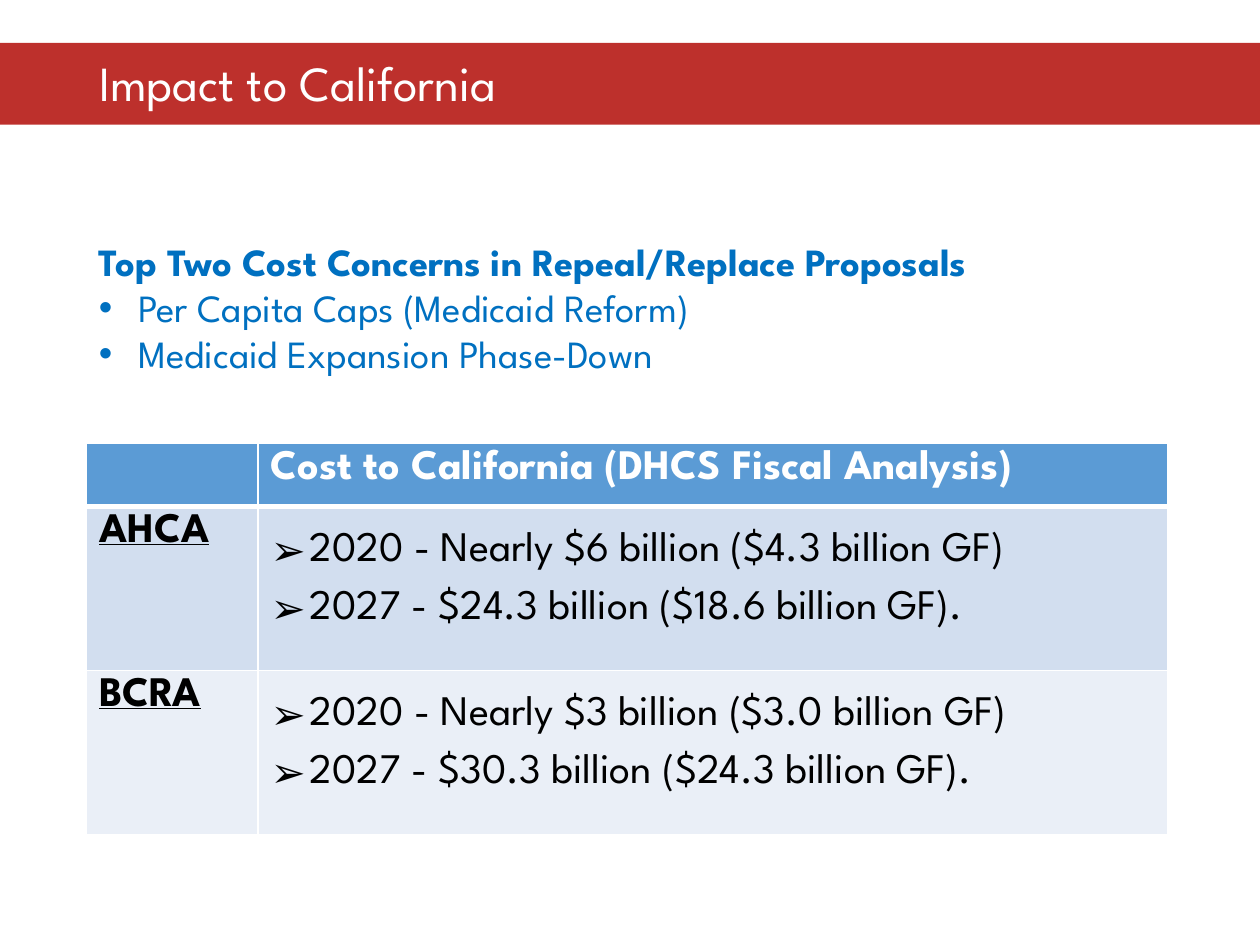
from lxml import etree
from pptx import Presentation
from pptx.dml.color import RGBColor
from pptx.enum.shapes import MSO_SHAPE
from pptx.enum.text import MSO_ANCHOR
from pptx.oxml.ns import qn
from pptx.util import Pt

RECTANGLE = MSO_SHAPE.RECTANGLE
TOP, MIDDLE = MSO_ANCHOR.TOP, MSO_ANCHOR.MIDDLE

TITLE = "Impact to California"
CONCERNS_HEADING = "Top Two Cost Concerns in Repeal/Replace Proposals"
CONCERNS = ["Per Capita Caps (Medicaid Reform)", "Medicaid Expansion Phase-Down"]
COST_HEADING = "Cost to California (DHCS Fiscal Analysis)"
COSTS = {
    "AHCA": ["2020 - Nearly $6 billion ($4.3 billion GF)",
             "2027 - $24.3 billion ($18.6 billion GF)."],
    "BCRA": ["2020 - Nearly $3 billion ($3.0 billion GF)",
             "2027 - $30.3 billion ($24.3 billion GF)."],
}

THEME = {
    "font": "League Spartan", "bullet_font": "Arial",
    "title_size": 28, "concern_size": 22, "cost_size": 24,
    "banner": "BD302C", "white": "FFFFFF", "black": "000000",
    "concern": "0070C0", "header": "5B9BD5", "bands": ["D2DEEF", "EAEFF7"],
}

SLIDE_WIDTH, SLIDE_HEIGHT = 720, 540
LEFT = 49.5
COLUMN_WIDTHS = [97.92, 519.84]
ROW_HEIGHTS = [35.28, 91.44, 83.52]
INDENT = 22.5


def color(key):
    return RGBColor.from_string(THEME[key])


def add_bullet(paragraph, symbol):
    properties = paragraph._p.get_or_add_pPr()
    properties.set("marL", str(Pt(INDENT)))
    properties.set("indent", str(-Pt(INDENT)))
    etree.SubElement(properties, qn("a:buFont")).set("typeface", THEME["bullet_font"])
    etree.SubElement(properties, qn("a:buChar")).set("char", symbol)


def write(frame, lines, size, ink, bold=False, underline=False, bullet=None,
          spacing=None):
    for line in lines:
        paragraph = frame.add_paragraph() if frame.text else frame.paragraphs[0]
        paragraph.text = line
        if spacing:
            paragraph.line_spacing = spacing
        if bullet:
            add_bullet(paragraph, bullet)
        font = paragraph.font
        font.name, font.size = THEME["font"], Pt(THEME[size])
        font.bold, font.underline = bold, underline
        font.color.rgb = color(ink)


def add_text_box(slide, top, width, height, anchor):
    frame = slide.shapes.add_textbox(Pt(LEFT), Pt(top), Pt(width), Pt(height)).text_frame
    frame.word_wrap = True
    frame.vertical_anchor = anchor
    return frame


def set_borders(cell, bottom):
    properties = cell._tc.get_or_add_tcPr()
    widths = {"a:lnL": 1, "a:lnR": 1, "a:lnT": 1, "a:lnB": bottom}
    for position, (side, width) in enumerate(widths.items()):
        border = etree.Element(qn(side), w=str(Pt(width)))
        fill = etree.SubElement(border, qn("a:solidFill"))
        etree.SubElement(fill, qn("a:srgbClr")).set("val", THEME["white"])
        properties.insert(position, border)


def add_cost_table(slide):
    table = slide.shapes.add_table(
        len(ROW_HEIGHTS), len(COLUMN_WIDTHS), Pt(LEFT), Pt(253.44),
        Pt(sum(COLUMN_WIDTHS)), Pt(sum(ROW_HEIGHTS))).table
    for column, width in zip(table.columns, COLUMN_WIDTHS):
        column.width = Pt(width)
    for row, height, fill in zip(table.rows, ROW_HEIGHTS, ["header", *THEME["bands"]]):
        row.height = Pt(height)
        for cell in row.cells:
            cell.fill.solid()
            cell.fill.fore_color.rgb = RGBColor.from_string(THEME.get(fill, fill))
    for cell in table.rows[0].cells:
        set_borders(cell, bottom=3)
    write(table.cell(0, 1).text_frame, [COST_HEADING], "cost_size", "white", bold=True)
    for index, (bill, costs) in enumerate(COSTS.items(), 1):
        write(table.cell(index, 0).text_frame, [bill], "cost_size", "black",
              bold=True, underline=True)
        write(table.cell(index, 1).text_frame, costs, "cost_size", "black",
              bullet="➢", spacing=1.5)


def main():
    deck = Presentation()
    deck.slide_width, deck.slide_height = Pt(SLIDE_WIDTH), Pt(SLIDE_HEIGHT)
    slide = deck.slides.add_slide(deck.slide_layouts[6])

    banner = slide.shapes.add_shape(RECTANGLE, 0, Pt(24.48), Pt(SLIDE_WIDTH), Pt(46.8))
    banner.shadow.inherit = False
    banner.fill.solid()
    banner.fill.fore_color.rgb = color("banner")
    banner.line.fill.background()

    title = add_text_box(slide, 30.24, 620.64, 51.84, TOP)
    write(title, [TITLE], "title_size", "white", spacing=0.9)

    add_cost_table(slide)

    concerns = add_text_box(slide, 131.76, 599.76, 87.12, MIDDLE)
    write(concerns, [CONCERNS_HEADING], "concern_size", "concern", bold=True)
    write(concerns, CONCERNS, "concern_size", "concern", bullet="•")

    deck.save("out.pptx")


if __name__ == "__main__":
    main()
